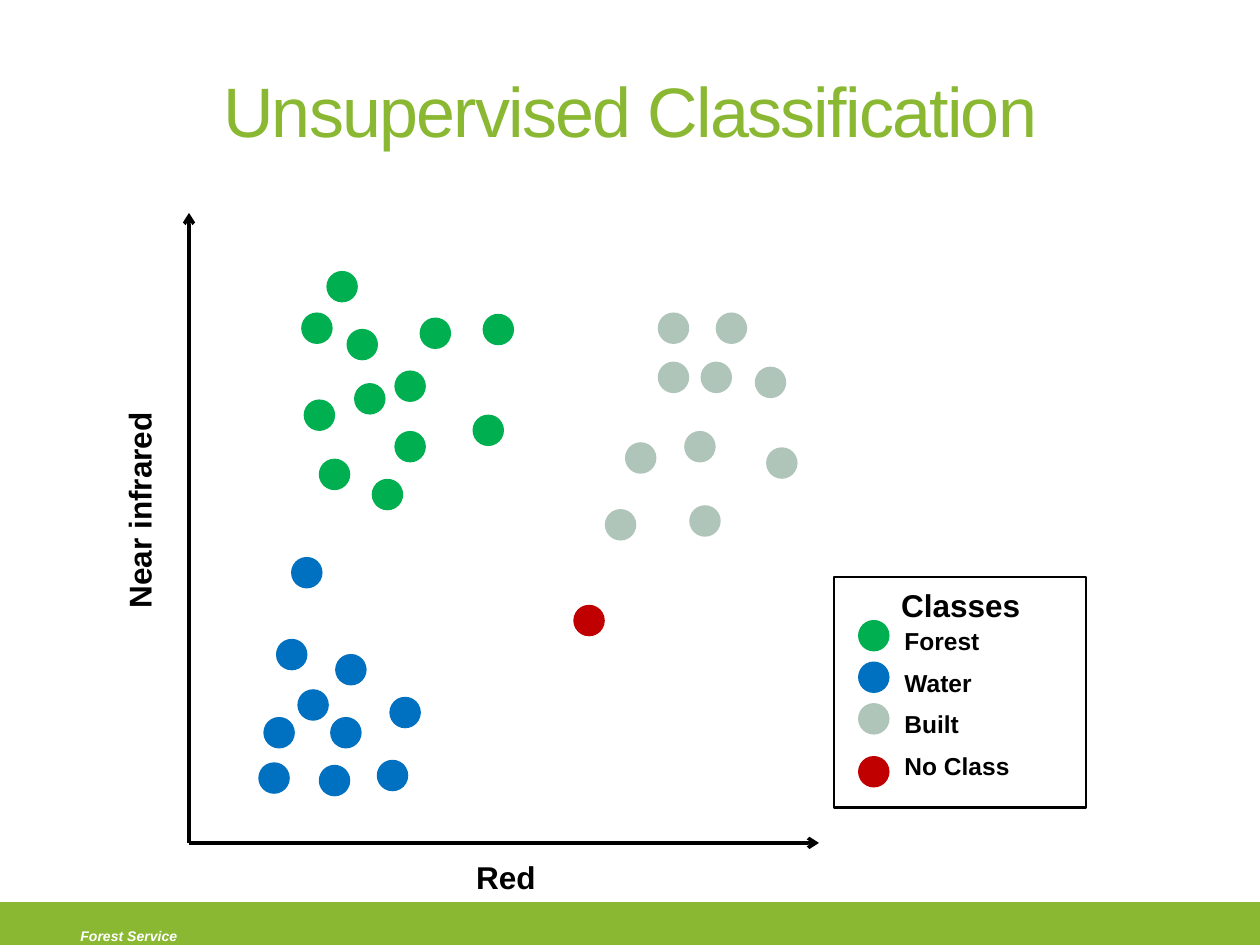
import pptx
import pptx.util
import pptx.dml.color
import pptx.enum.shapes
import pptx.enum.text
import pptx.oxml
import pptx.oxml.ns
from lxml import etree

WIDE, HIGH = 10, 7.5
LIME, BLACK, WHITE = "8AB833", "000000", "FFFFFF"
GREEN, BLUE, GREY, RED = "00B050", "0070C0", "AFC5B9", "C00000"
DOT, STEP = 0.25, 0.33
ORIGIN, REACH = (1.5, 6.69), 5
LABEL = (1.77, 0.4)
LEGEND = (6.62, 4.58, 2, 1.83)

DOTS = {
    BLUE: [(2.09, 5.69), (2.36, 5.47), (2.19, 5.07), (2.53, 6.07), (2.62, 5.69),
           (2.66, 5.19), (2.05, 6.05), (2.99, 6.03), (2.31, 4.42), (3.09, 5.53)],
    GREEN: [(2.59, 2.15), (2.39, 2.48), (2.75, 2.61), (2.81, 3.04), (3.33, 2.52),
            (2.53, 3.64), (3.83, 2.49), (3.13, 3.42), (2.41, 3.17), (3.13, 2.94),
            (2.95, 3.8), (3.75, 3.29)],
    GREY: [(5.22, 2.87), (5.43, 3.42), (5.99, 2.91), (5.47, 4.01), (6.08, 3.55),
           (4.96, 3.51), (5.56, 2.87), (4.8, 4.04), (5.22, 2.48), (5.68, 2.48)],
    RED: [(4.55, 4.8)],
}
CLASSES = [("Forest", GREEN, 0), ("Water", BLUE, 0), ("Built", GREY, 0), ("No Class", RED, 0.09)]

KIND = pptx.enum.shapes.MSO_SHAPE
ALIGN = pptx.enum.text.PP_ALIGN


def inch(*nums):
    return [pptx.util.Inches(n) for n in nums]


def rgb(code):
    return pptx.dml.color.RGBColor.from_string(code)


def write(frame, text, size, color=BLACK, bold=True, slant=False, align=ALIGN.CENTER):
    para = frame.paragraphs[0]
    para.alignment = align
    run = para.add_run()
    run.text = text
    font = run.font
    font.name, font.size = "Arial", pptx.util.Pt(size)
    font.bold, font.italic = bold, slant
    font.color.rgb = rgb(color)
    return run


def label(home, box, text, size, **style):
    shape = home.add_textbox(*inch(*box))
    shape.text_frame.word_wrap = True
    write(shape.text_frame, text, size, **style)
    return shape


def block(home, kind, box, fill=None, line=None, width=1):
    shape = home.add_shape(kind, *inch(*box))
    shape.shadow.inherit = False
    if fill:
        shape.fill.solid()
        shape.fill.fore_color.rgb = rgb(fill)
    else:
        shape.fill.background()
    if line:
        shape.line.color.rgb = rgb(line)
        shape.line.width = pptx.util.Pt(width)
    else:
        shape.line.fill.background()


def dot(home, left, top, color):
    block(home, KIND.FLOWCHART_CONNECTOR, (left, top, DOT, DOT), color)


def axis(home, end):
    line = home.add_connector(pptx.enum.shapes.MSO_CONNECTOR.STRAIGHT, *inch(*ORIGIN, *end))
    line.line.color.rgb = rgb(BLACK)
    line.line.width = pptx.util.Pt(2)
    tag = pptx.oxml.ns.qn
    etree.SubElement(line.line._get_or_add_ln(), tag("a:tailEnd"), type="arrow")
    etree.SubElement(line._element.spPr, tag("a:effectLst"))


def main():
    deck = pptx.Presentation()
    deck.slide_width, deck.slide_height = inch(WIDE, HIGH)
    slide = deck.slides.add_slide(deck.slide_layouts[5])
    shapes = slide.shapes

    title = shapes.title
    title.left, title.top, title.width, title.height = inch(0.5, 0.33, 9, 1.08)
    title.text_frame.vertical_anchor = pptx.enum.text.MSO_ANCHOR.MIDDLE
    run = write(title.text_frame, "Unsupervised Classification", 40, LIME, bold=False)
    run.font._element.set("spc", "-100")

    block(shapes, KIND.RECTANGLE, (0, 7.17, WIDE, HIGH - 7.17), LIME, LIME, 2.08)
    label(shapes, (0.54, 7.31, 2.04, 0.24), "Forest Service", 8,
          color=WHITE, slant=True, align=ALIGN.LEFT)

    left, base = ORIGIN
    axis(shapes, (left, base - REACH))
    axis(shapes, (left + REACH, base))
    label(shapes, (0.22, 3.85, *LABEL), "Near infrared", 18).rotation = 270
    label(shapes, (3.13, 6.76, *LABEL), "Red", 18)

    for color, spots in DOTS.items():
        for x, y in spots:
            dot(shapes, x, y, color)

    key = shapes.add_group_shape().shapes
    x, y, *_ = LEGEND
    block(key, KIND.RECTANGLE, LEGEND, line=BLACK, width=1.5)
    label(key, (x + 0.12, y + 0.02, *LABEL), "Classes", 18)
    for row, (name, color, drop) in enumerate(CLASSES):
        top = y + 0.34 + row * STEP
        dot(key, x + 0.19, top + drop, color)
        label(key, (x + 0.46, top, LABEL[0], 0.34), name, 14, align=ALIGN.LEFT)

    deck.save("out.pptx")


if __name__ == "__main__":
    main()
